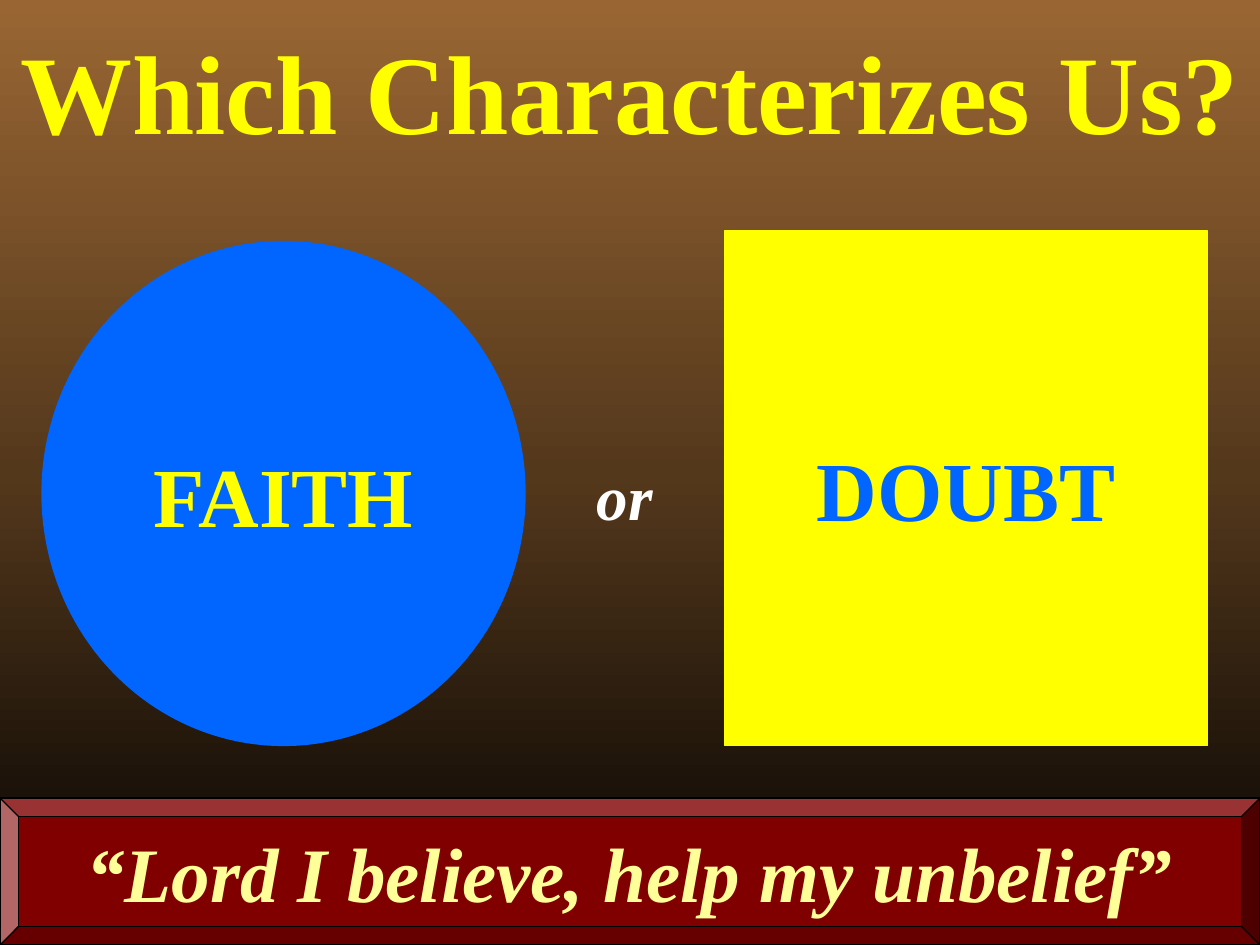
from copy import deepcopy

from lxml.etree import SubElement
from pptx import Presentation
from pptx.dml.color import RGBColor
from pptx.enum.shapes import MSO_SHAPE
from pptx.enum.text import MSO_ANCHOR, MSO_AUTO_SIZE, PP_ALIGN
from pptx.oxml.ns import qn
from pptx.util import Pt

YELLOW, BLUE, BLACK = "FFFF00", "0066FF", "000000"


def color(hex_value):
    return RGBColor.from_string(hex_value)


def paint_background(slide, top, middle, bottom):
    fill = slide.background.fill
    fill.gradient()
    fill.gradient_angle = 270
    # A third stop, halfway down
    first_stop = slide.element.find(".//" + qn("a:gs"))
    first_stop.addnext(deepcopy(first_stop))
    for stop, position, shade in zip(fill.gradient_stops, (0, 0.5, 1), (top, middle, bottom)):
        stop.position = position
        stop.color.rgb = color(shade)


def write(box, text, size, shade, italic=False, wrap=False, anchor=MSO_ANCHOR.MIDDLE):
    frame = box.text_frame
    frame.word_wrap = wrap
    frame.vertical_anchor = anchor
    paragraph = frame.paragraphs[0]
    paragraph.alignment = PP_ALIGN.CENTER
    run = paragraph.add_run()
    run.text = text
    style = {"name": "Times New Roman", "size": Pt(size), "bold": True, "italic": italic}
    for attribute, value in style.items():
        setattr(run.font, attribute, value)
    run.font.color.rgb = color(shade)
    return run


def add_label(slide, bounds, text, size, shade, **options):
    label = slide.shapes.add_textbox(*map(Pt, bounds))
    return label, write(label, text, size, shade, **options)


def add_panel(slide, kind, bounds, fill, outline, text, size, shade, italic=False):
    panel = slide.shapes.add_shape(kind, *map(Pt, bounds))
    panel.shadow.inherit = False
    panel.fill.solid()
    panel.fill.fore_color.rgb = color(fill)
    panel.line.color.rgb = color(outline)
    panel.line.width = Pt(0.75)
    write(panel, text, size, shade, italic)


def add_text_shadow(run):
    effects = SubElement(run.font.fill._xPr, qn("a:effectLst"))
    shadow = SubElement(effects, qn("a:outerShdw"), dist=str(Pt(4)), dir="2700000")
    SubElement(shadow, qn("a:srgbClr"), val=BLACK)
    # Effects belong right after the text fill
    run.font.fill._xPr.find(qn("a:solidFill")).addnext(effects)


def main():
    presentation = Presentation()
    presentation.slide_width, presentation.slide_height = Pt(720), Pt(540)
    slide = presentation.slides.add_slide(presentation.slide_layouts[6])
    paint_background(slide, "996633", "54381C", BLACK)

    # Title
    _, question = add_label(slide, (0, 6, 720, 90), "Which Characterizes Us?", 64, YELLOW, wrap=True)
    add_text_shadow(question)

    # The two choices
    add_panel(slide, MSO_SHAPE.OVAL, (24, 138, 276, 288), BLUE, BLUE, "FAITH", 48, YELLOW)
    add_panel(slide, MSO_SHAPE.RECTANGLE, (414, 132, 276, 294), YELLOW, YELLOW, "DOUBT", 48, BLUE)
    either, _ = add_label(slide, (300, 258, 114, 50.5), "or", 36, "FFFFFF",
                          italic=True, wrap=True, anchor=MSO_ANCHOR.TOP)
    either.text_frame.auto_size = MSO_AUTO_SIZE.SHAPE_TO_FIT_TEXT

    # Quotation
    add_panel(slide, MSO_SHAPE.BEVEL, (0, 456, 720, 84), "800000", BLACK,
              "“Lord I believe, help my unbelief”", 44, "FFFF99", italic=True)

    presentation.save("out.pptx")


if __name__ == "__main__":
    main()
